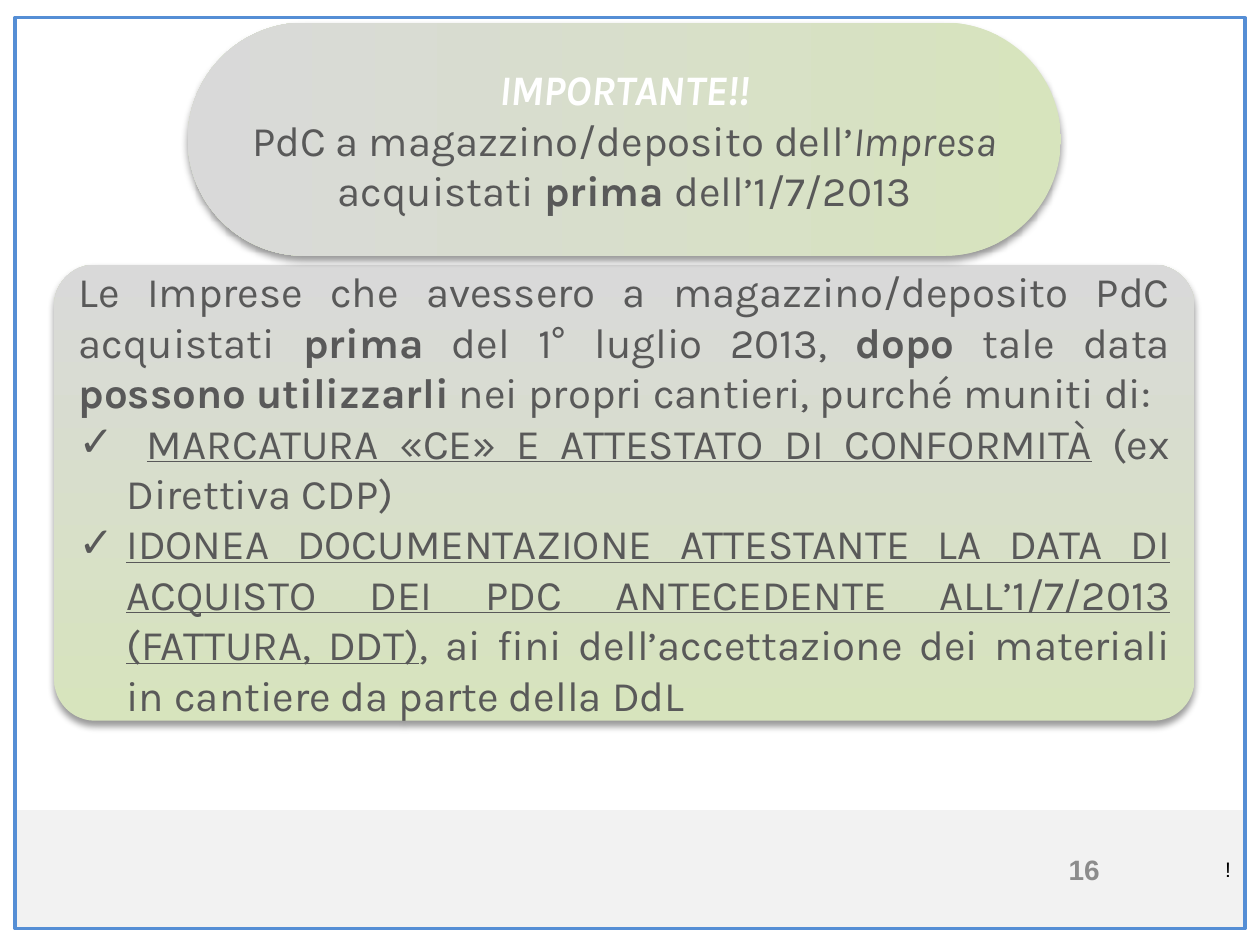
from lxml.etree import SubElement
from pptx import Presentation
from pptx.dml.color import RGBColor
from pptx.enum.shapes import MSO_SHAPE
from pptx.enum.text import MSO_ANCHOR, PP_ALIGN
from pptx.oxml.ns import qn
from pptx.util import Inches, Pt

COLORS = {
    "band": "F2F2F2", "frame": "558ED5", "green": "D7E4BD", "gray": "D9D9D9",
    "text": "595959", "white": "FFFFFF", "black": "000000", "number": "8C8C8C",
}
INDENT = Inches(0.38)


def rgb(name):
    return RGBColor.from_string(COLORS[name])


class Deck:
    """Holds the style and the current slide; places are percent shares of it."""

    font, size = "Karla", 24

    def __init__(self, prs):
        self.prs = prs
        self.slide = prs.slides.add_slide(prs.slide_layouts.get_by_name("Title Only"))

    def box(self, left, top, width, height):
        w, h = self.prs.slide_width, self.prs.slide_height
        return [round(share * side / 100)
                for share, side in ((left, w), (top, h), (width, w), (height, h))]

    def shape(self, kind, place):
        sp = self.slide.shapes.add_shape(kind, *self.box(*place))
        sp.shadow.inherit = False
        sp.fill.background()
        sp.line.fill.background()
        return sp

    def band(self, place, color):
        sp = self.shape(MSO_SHAPE.RECTANGLE, place)
        sp.fill.solid()
        sp.fill.fore_color.rgb = rgb(color)

    def frame(self, place, color):
        sp = self.shape(MSO_SHAPE.RECTANGLE, place)
        sp.line.color.rgb = rgb(color)
        sp.line.width = Pt(2)

    def card(self, place, rounding, angle, paragraphs, align):
        """Rounded gradient box; paragraphs are (runs, color, bulleted)."""
        sp = self.shape(MSO_SHAPE.ROUNDED_RECTANGLE, place)
        sp.adjustments[0] = rounding
        sp.fill.gradient()
        sp.fill.gradient_angle = angle
        for stop, color in zip(sp.fill.gradient_stops, ("green", "gray")):
            stop.color.rgb = rgb(color)
        self.cast_shadow(sp)
        tf = sp.text_frame
        tf.word_wrap = True
        tf.vertical_anchor = MSO_ANCHOR.MIDDLE
        for i, (runs, color, bulleted) in enumerate(paragraphs):
            p = tf.add_paragraph() if i else tf.paragraphs[0]
            p.alignment = align
            if bulleted:
                self.check_bullet(p)
            for text, marks in runs:
                r = p.add_run()
                r.text = text
                self.style(r.font, self.font, self.size, color, "b" in marks)
                r.font.italic = "i" in marks
                r.font.underline = "u" in marks

    def cast_shadow(self, sp):
        effects = sp._element.spPr.find(qn("a:effectLst"))
        shadow = SubElement(effects, qn("a:outerShdw"), blurRad=str(Pt(4)),
                            dist=str(Pt(3)), dir="5400000", rotWithShape="0")
        color = SubElement(shadow, qn("a:srgbClr"), val=COLORS["black"])
        SubElement(color, qn("a:alpha"), val="40000")

    def check_bullet(self, p):
        pPr = p._p.get_or_add_pPr()
        pPr.set("marL", str(INDENT))
        pPr.set("indent", str(-INDENT))
        SubElement(pPr, qn("a:buFont"), typeface="Arial")
        SubElement(pPr, qn("a:buChar"), char="✓")

    def style(self, font, name, size, color, bold=False):
        font.name, font.size, font.bold = name, Pt(size), bold
        font.color.rgb = rgb(color)

    def label(self, sp, text, size, color, align, bold=False):
        tf = sp.text_frame
        tf.word_wrap = True
        tf.vertical_anchor = MSO_ANCHOR.MIDDLE
        tf.text = text
        p = tf.paragraphs[0]
        p.alignment = align
        self.style(p.runs[0].font, "Arial", size, color, bold)

    def title(self, place, text):
        """Fill the title placeholder and bring it in front of the band."""
        sp = self.slide.shapes.title
        sp.left, sp.top, sp.width, sp.height = self.box(*place)
        self.label(sp, text, 12, "black", PP_ALIGN.RIGHT)
        self.slide.shapes._spTree.append(sp._element)

    def page_number(self, place, text):
        sp = self.slide.shapes.add_textbox(*self.box(*place))
        self.label(sp, text, 16, "number", PP_ALIGN.CENTER, bold=True)


def main():
    prs = Presentation()
    prs.slide_width, prs.slide_height = Inches(10), Inches(7.5)
    deck = Deck(prs)
    deck.band((1.2, 85.73, 97.6, 12.53), "band")
    deck.frame((1.2, 1.87, 97.6, 96.4), "frame")
    deck.title((61.8, 86, 36.9, 12), "!")
    deck.page_number((74.4, 89.33, 23.3, 5.33), "16")

    deck.card((4.3, 28, 90.5, 48.27), 0.09, 90, [
        ([("Le Imprese che avessero a magazzino/deposito PdC acquistati ", ""),
          ("prima", "b"), (" del 1° luglio 2013, ", ""), ("dopo", "b"),
          (" tale data ", ""), ("possono utilizzarli", "b"),
          (" nei propri cantieri, purché muniti di:", "")], "text", False),
        ([(" ", ""), ("MARCATURA «CE» E ATTESTATO DI CONFORMITÀ", "u"),
          (" (ex Direttiva CDP)", "")], "text", True),
        ([("IDONEA DOCUMENTAZIONE ATTESTANTE LA DATA DI ACQUISTO DEI PDC "
           "ANTECEDENTE ALL’1/7/2013 (FATTURA, DDT)", "u"),
          (", ai fini dell’accettazione dei materiali in cantiere "
           "da parte della DdL", "")], "text", True),
    ], PP_ALIGN.JUSTIFY)

    deck.card((14.9, 2.4, 69.3, 24.67), 0.5, 180, [
        ([("IMPORTANTE!!", "bi")], "white", False),
        ([("PdC a magazzino/deposito dell’", ""), ("Impresa", "i")], "text", False),
        ([("acquistati ", ""), ("prima", "b"), (" dell’1/7/2013", "")], "text", False),
    ], PP_ALIGN.CENTER)
    prs.save("out.pptx")


if __name__ == "__main__":
    main()
